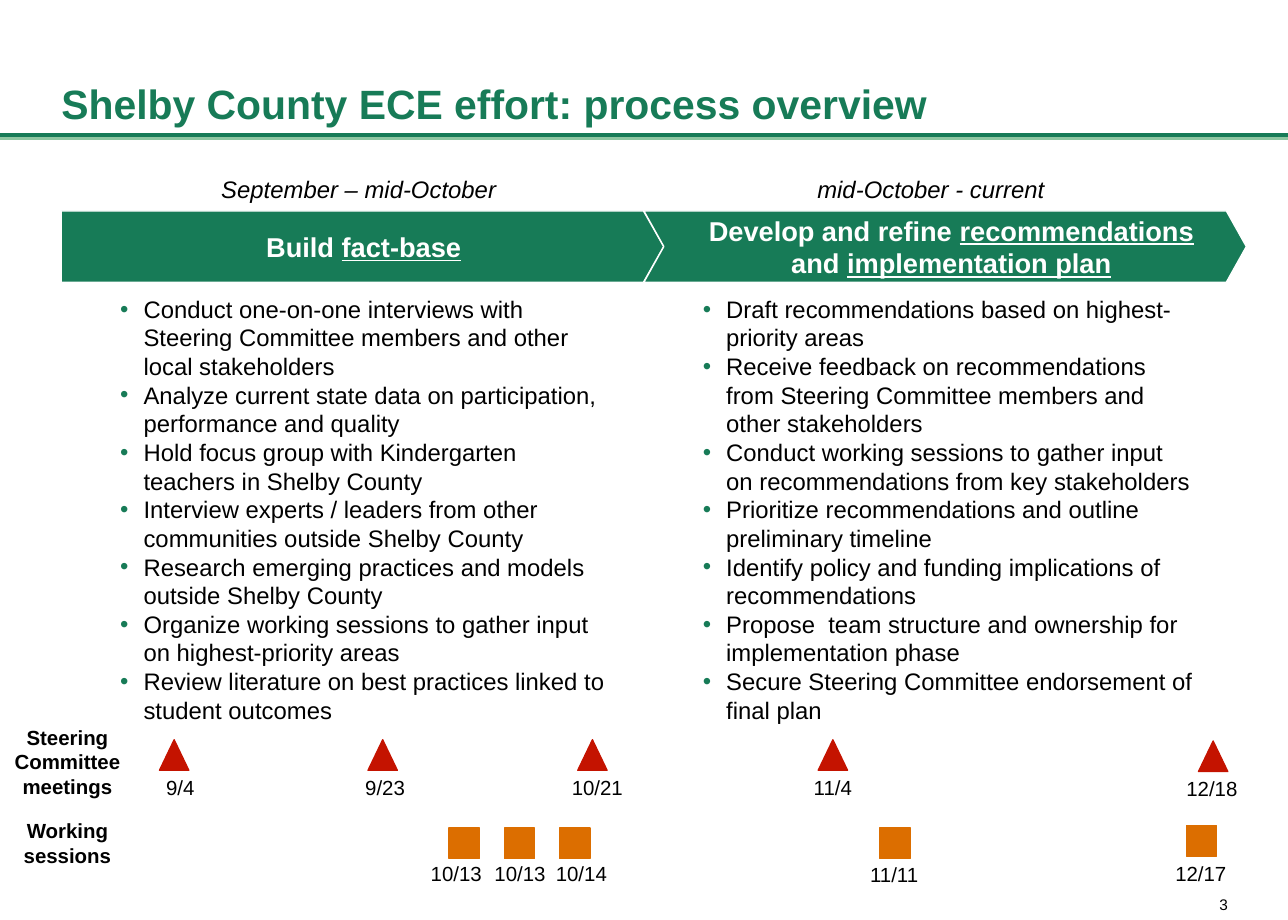
"""Build the Shelby County ECE process overview slide."""
from lxml.etree import SubElement
from pptx import Presentation
from pptx.dml.color import RGBColor
from pptx.enum.shapes import MSO_CONNECTOR, MSO_SHAPE as SHAPE
from pptx.enum.text import MSO_ANCHOR as ANCHOR, MSO_AUTO_SIZE, PP_ALIGN as ALIGN
from pptx.oxml.ns import qn
from pptx.util import Emu, Pt

TITLE = "Shelby County ECE effort: process overview"
PAGE_NUMBER = "3"
PHASES = [
    {
        "period": "September – mid-October",
        "period_box": (170, 132, 245, 43),
        "heading": [("Build ", False), ("fact-base", True)],
        "arrow": (SHAPE.PENTAGON, 50, 0.283),
        "tasks_left": 75,
        "tasks": [
            "Conduct one-on-one interviews with Steering Committee members and other local stakeholders",
            "Analyze current state data on participation, performance and quality",
            "Hold focus group with Kindergarten teachers in Shelby County",
            "Interview experts / leaders from other communities outside Shelby County",
            "Research emerging practices and models outside Shelby County",
            "Organize working sessions to gather input on highest-priority areas",
            "Review literature on best practices linked to student outcomes",
        ],
    },
    {
        "period": "mid-October - current",
        "period_box": (656, 132, 206, 43),
        "heading": [("Develop and refine ", False), ("recommendations", True),
                    (" and ", False), ("implementation plan", True)],
        "arrow": (SHAPE.CHEVRON, 525, 0.28),
        "tasks_left": 550,
        "tasks": [
            "Draft recommendations based on highest-priority areas",
            "Receive feedback on recommendations from Steering Committee members and other stakeholders",
            "Conduct working sessions to gather input on recommendations from key stakeholders",
            "Prioritize recommendations and outline preliminary timeline",
            "Identify policy and funding implications of recommendations",
            "Propose  team structure and ownership for implementation phase",
            "Secure Steering Committee endorsement of final plan",
        ],
    },
]
# Each event: date, marker left, marker top, date centre, date top
TIMELINES = [
    {
        "label": "Steering Committee meetings", "label_top": 578,
        "marker": (SHAPE.ISOSCELES_TRIANGLE, 24, "red"),
        "events": [("9/4", 130, 603, 147, 622), ("9/23", 300, 603, 314, 622),
                   ("10/21", 471, 603, 487, 622), ("11/4", 667, 603, 679, 622),
                   ("12/18", 977, 604, 988, 623)],
    },
    {
        "label": "Working sessions", "label_top": 644,
        "marker": (SHAPE.RECTANGLE, 25, "orange"),
        "events": [("10/13", 366, 675, 372, 692), ("10/13", 411, 675, 424, 692),
                   ("10/14", 456, 675, 474, 692), ("11/11", 717, 675, 729, 693),
                   ("12/17", 967, 673, 979, 692)],
    },
]
COLORS = {"green": "177B57", "light_green": "8EC6A1", "red": "C41300",
          "orange": "DC6E00", "white": "FFFFFF", "black": "000000"}
EMU_PER_PX = 9144
SLIDE_WIDTH, SLIDE_HEIGHT = 1050, 750
DATE_WIDTH = 176


def px(length):
    return Emu(length * EMU_PER_PX)


def color(name):
    return RGBColor.from_string(COLORS[name])


def place(part, left, top, width, height):
    part.left, part.top, part.width, part.height = map(px, (left, top, width, height))


def set_frame(frame, insets=(10, 10, 10, 10), anchor=ANCHOR.TOP, wrap=True):
    frame.auto_size = MSO_AUTO_SIZE.NONE
    frame.word_wrap = wrap
    frame.vertical_anchor = anchor
    (frame.margin_left, frame.margin_top,
     frame.margin_right, frame.margin_bottom) = map(px, insets)


def set_font(paragraph, size, name="black", bold=False, italic=False, align=ALIGN.CENTER):
    paragraph.alignment = align
    font = paragraph.font
    font.name, font.size, font.bold, font.italic = "Arial", Pt(size), bold, italic
    font.color.rgb = color(name)


def add_text(slide, text, box, size, bold=False, italic=False, align=ALIGN.CENTER, **frame_options):
    frame = slide.shapes.add_textbox(*map(px, box)).text_frame
    set_frame(frame, **frame_options)
    frame.text = text
    set_font(frame.paragraphs[0], size, bold=bold, italic=italic, align=align)


def add_filled(slide, kind, box, fill, line):
    shape = slide.shapes.add_shape(kind, *map(px, box))
    shape.shadow.inherit = False
    shape.fill.solid()
    shape.fill.fore_color.rgb = color(fill)
    shape.line.color.rgb = color(line)
    shape.line.width = Pt(0.75)
    return shape


def add_title_rule(slide):
    rule = slide.shapes.add_connector(
        MSO_CONNECTOR.STRAIGHT, px(SLIDE_WIDTH), px(110), px(0), px(110))
    rule.line.color.rgb = color("green")
    rule.line.width = Pt(2.25)
    effects = SubElement(rule.element.spPr, qn("a:effectLst"))
    shadow = SubElement(effects, qn("a:outerShdw"), blurRad="0", dist=str(Pt(2)),
                        dir="5400000", algn="ctr", rotWithShape="0")
    SubElement(shadow, qn("a:srgbClr"), val=COLORS["light_green"])


def add_heading(slide, phase):
    kind, left, point = phase["arrow"]
    arrow = add_filled(slide, kind, (left, 172, 491, 58), "green", "white")
    arrow.adjustments[0] = point
    set_frame(arrow.text_frame, insets=(20, 10, 10, 10), anchor=ANCHOR.MIDDLE)
    paragraph = arrow.text_frame.paragraphs[0]
    set_font(paragraph, 16, "white", bold=True)
    for words, underlined in phase["heading"]:
        run = paragraph.add_run()
        run.text = words
        run.font.underline = underlined


def fill_tasks(body, phase):
    place(body, phase["tasks_left"], 230, 433, 393)
    frame = body.text_frame
    set_frame(frame)
    frame.text = "\n".join(phase["tasks"])
    for paragraph in frame.paragraphs:
        paragraph.level = 1
        paragraph.space_before = paragraph.space_after = Pt(0)
        paragraph.line_spacing = 1.0
        properties = paragraph._p.get_or_add_pPr()
        properties.set("marL", str(px(32)))
        properties.set("indent", str(px(-19)))
        bullet_color = SubElement(properties, qn("a:buClr"))
        SubElement(bullet_color, qn("a:srgbClr"), val=COLORS["green"])
        SubElement(properties, qn("a:buFont"), typeface="Arial")
        SubElement(properties, qn("a:buChar"), char="•")
        set_font(paragraph, 14, align=ALIGN.LEFT)


def add_timeline(slide, timeline):
    kind, width, fill = timeline["marker"]
    add_text(slide, timeline["label"], (0, timeline["label_top"], 110, 86), 12,
             bold=True, anchor=ANCHOR.MIDDLE)
    for date, left, top, date_center, date_top in timeline["events"]:
        add_filled(slide, kind, (left, top, width, 25), fill, fill)
        add_text(slide, date, (date_center - DATE_WIDTH // 2, date_top, DATE_WIDTH, 40), 12)


def main():
    deck = Presentation()
    deck.slide_width, deck.slide_height = px(SLIDE_WIDTH), px(SLIDE_HEIGHT)
    slide = deck.slides.add_slide(deck.slide_layouts[3])
    title, *bodies = slide.placeholders
    add_title_rule(slide)
    place(title, 50, 18, 950, 91)
    set_frame(title.text_frame, insets=(0, 5, 0, 5), anchor=ANCHOR.BOTTOM)
    title.text_frame.text = TITLE
    set_font(title.text_frame.paragraphs[0], 24, "green", bold=True, align=ALIGN.LEFT)
    for phase, body in zip(PHASES, bodies):
        add_heading(slide, phase)
        add_text(slide, phase["period"], phase["period_box"], 14, italic=True, wrap=False)
        fill_tasks(body, phase)
    for timeline in TIMELINES:
        add_timeline(slide, timeline)
    add_text(slide, PAGE_NUMBER, (978, 730, 23, 14), 9, align=ALIGN.RIGHT,
             insets=(0, 0, 0, 0), wrap=False)
    deck.save("out.pptx")


if __name__ == "__main__":
    main()
